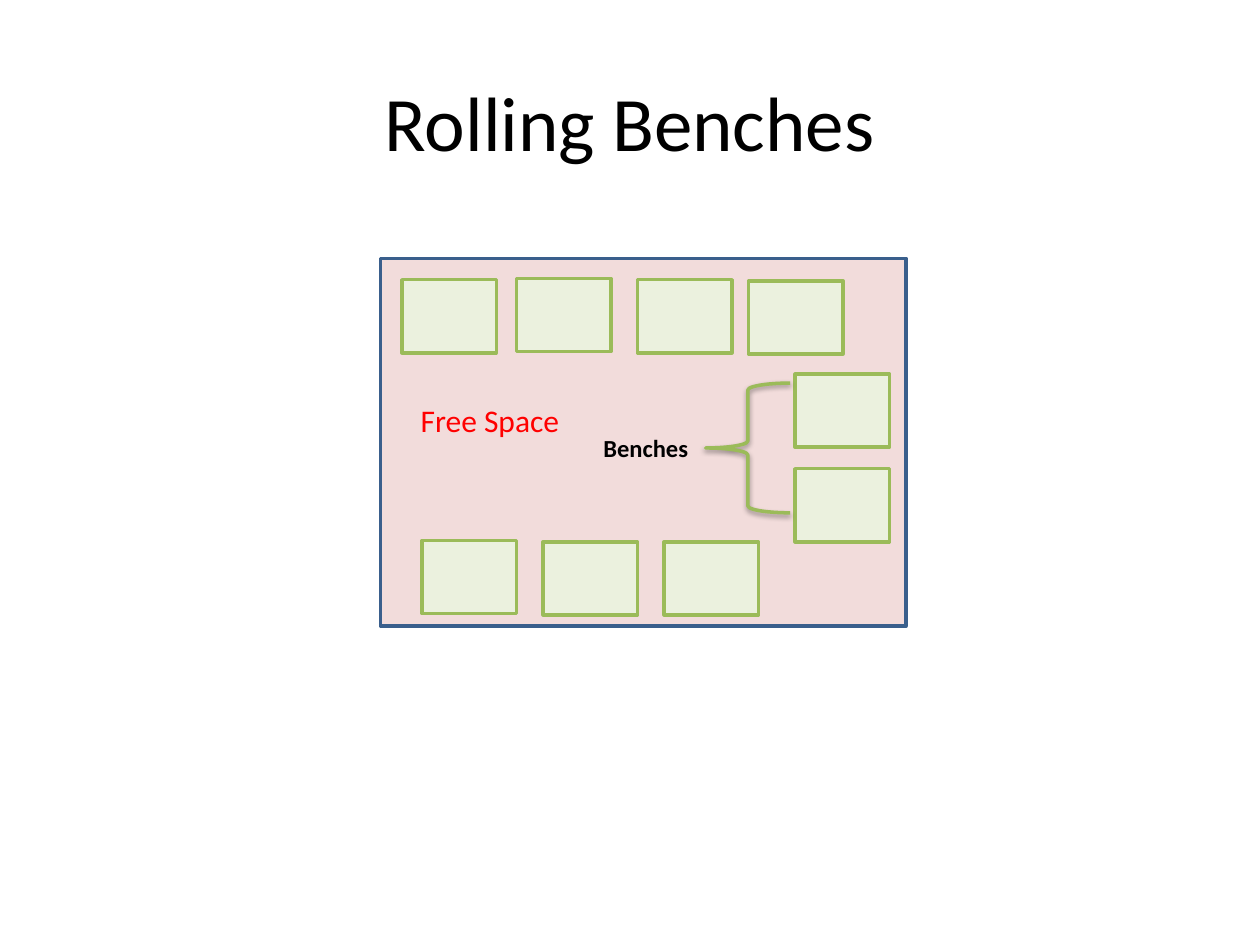
from lxml.etree import SubElement
from pptx import Presentation
from pptx.dml.color import RGBColor
from pptx.enum.shapes import MSO_SHAPE as Shape
from pptx.enum.text import MSO_ANCHOR as Anchor, MSO_AUTO_SIZE as AutoSize, PP_ALIGN as Align
from pptx.oxml.ns import qn
from pptx.util import Inches, Pt

THEME = {
    "font": "Calibri", "title": 44, "label": 18, "note": 14, "line": 2,
    "black": "000000", "red": "FF0000", "room": "F2DCDB", "wall": "3A5F8C",
    "bench": "EBF1DE", "edge": "9BBB59",
}
TITLE = ("Rolling Benches", (0.5, 0.33, 9, 1.25))
ROOM = (3.02, 2.05, 4.17, 2.92)
BENCH_SIZE = (0.75, 0.58)
BENCHES = [
    (3.19, 2.22), (4.1, 2.21), (5.06, 2.22), (5.94, 2.23),
    (6.31, 2.97), (6.31, 3.72),
    (5.27, 4.3), (4.31, 4.3), (3.35, 4.29),
]
BRACE = (5.6, 3.04, 0.67, 1.03)
LABELS = [
    ("Benches", (4.69, 3.39, 0.96, 0.34), "note", "black", True),
    ("Free Space", (3.24, 3.13, 1.45, 0.4), "label", "red", False),
]


def color(name):
    return RGBColor.from_string(THEME[name])


def box(at):
    return [Inches(v) for v in at]


def add_run(p, text, size, ink, bold=False):
    r = p.add_run()
    r.text = text
    r.font.name = THEME["font"]
    r.font.size = Pt(THEME[size])
    r.font.color.rgb = color(ink)
    r.font.bold = bold


def add_outline(s, kind, at, line, fill=None):
    sp = s.shapes.add_shape(kind, *box(at))
    sp.shadow.inherit = False
    if fill:
        sp.fill.solid()
        sp.fill.fore_color.rgb = color(fill)
    else:
        sp.fill.background()
    sp.line.color.rgb = color(line)
    sp.line.width = Pt(THEME["line"])
    return sp


def add_drop_shadow(sp):
    effects = sp.element.spPr.find(qn("a:effectLst"))
    shadow = SubElement(effects, qn("a:outerShdw"), blurRad=str(Pt(3.1)),
                        dist=str(Pt(1.6)), dir="5400000", rotWithShape="0")
    ink = SubElement(shadow, qn("a:srgbClr"), val=THEME["black"])
    SubElement(ink, qn("a:alpha"), val="38000")


def add_label(s, text, at, size, ink, bold):
    tf = s.shapes.add_textbox(*box(at)).text_frame
    tf.word_wrap = True
    tf.auto_size = AutoSize.SHAPE_TO_FIT_TEXT
    add_run(tf.paragraphs[0], text, size, ink, bold)


def add_title(s, text, at):
    sp = s.shapes.title
    sp.left, sp.top, sp.width, sp.height = box(at)
    tf = sp.text_frame
    tf.vertical_anchor = Anchor.MIDDLE
    p = tf.paragraphs[0]
    p.alignment = Align.CENTER
    add_run(p, text, "title", "black")


def main():
    prs = Presentation()
    prs.slide_width, prs.slide_height = Inches(10), Inches(7.5)
    s = prs.slides.add_slide(prs.slide_layouts[5])
    add_title(s, *TITLE)
    add_outline(s, Shape.RECTANGLE, ROOM, "wall", "room")
    for corner in BENCHES:
        add_outline(s, Shape.RECTANGLE, corner + BENCH_SIZE, "edge", "bench")
    brace = add_outline(s, Shape.RIGHT_BRACE, BRACE, "edge")
    brace.rotation = 180
    add_drop_shadow(brace)
    for label in LABELS:
        add_label(s, *label)
    prs.save("out.pptx")


if __name__ == "__main__":
    main()
